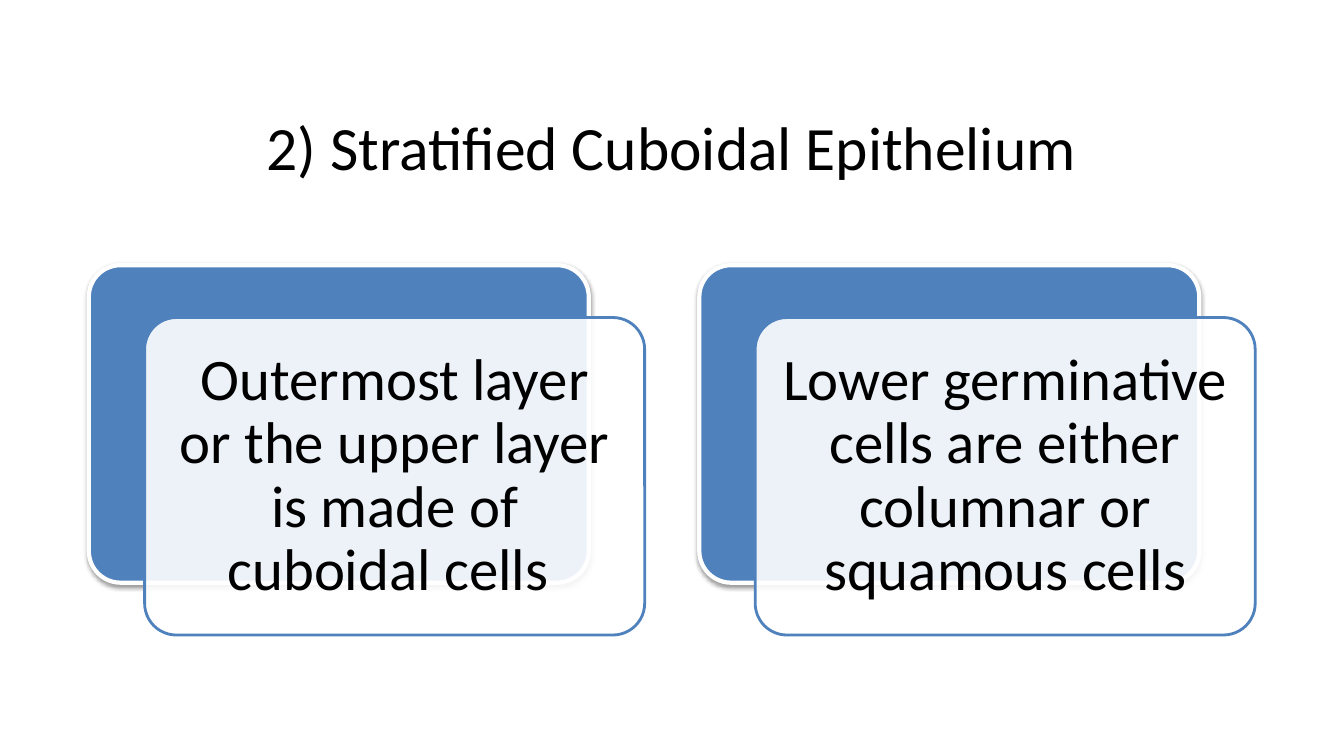
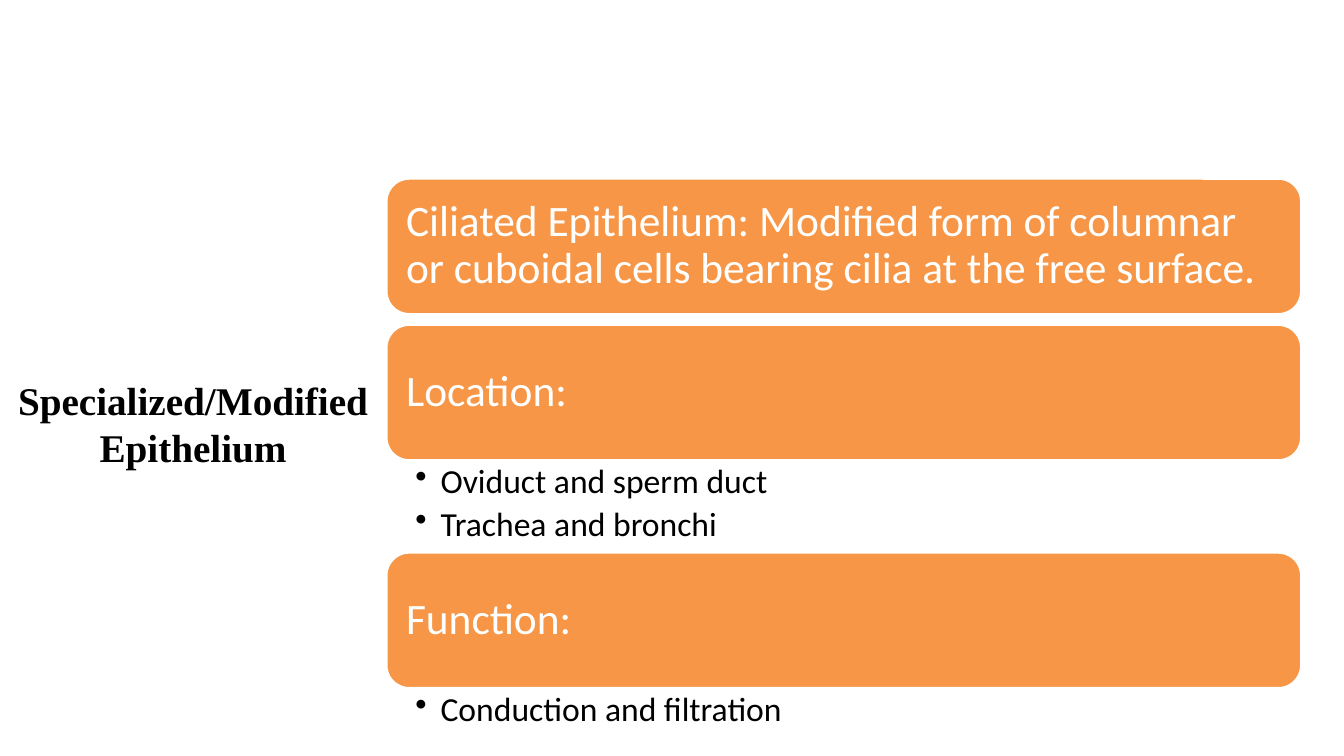
"""Build two slides on stratified cuboidal and specialized epithelium."""
from lxml.etree import SubElement
from pptx import Presentation
from pptx.dml.color import RGBColor
from pptx.enum.shapes import MSO_SHAPE
from pptx.enum.text import MSO_ANCHOR, MSO_AUTO_SIZE, PP_ALIGN
from pptx.oxml.ns import qn
from pptx.util import Pt

BLACK, WHITE, BLUE, ORANGE = "000000", "FFFFFF", "4F81BD", "F79646"
BODY_FONT = "Calibri"


def write(frame, paragraphs, size, color, font=BODY_FONT, bold=False, align=PP_ALIGN.LEFT,
          inset=(7.2, 3.6, 7.2, 3.6), anchor=MSO_ANCHOR.MIDDLE, spacing=0.9, bullets=False):
    frame.word_wrap = True
    frame.auto_size = MSO_AUTO_SIZE.NONE
    frame.vertical_anchor = anchor
    frame.margin_left, frame.margin_top, frame.margin_right, frame.margin_bottom = map(Pt, inset)
    for index, text in enumerate(paragraphs):
        paragraph = frame.add_paragraph() if index else frame.paragraphs[0]
        if bullets:
            paragraph.level = 1
            properties = paragraph._p.get_or_add_pPr()
            properties.set("marL", str(Pt(18)))
            properties.set("indent", str(-Pt(18)))
            SubElement(properties, qn("a:buChar"), char="•")
            paragraph.space_after = Pt(4.8)
        paragraph.alignment = align
        paragraph.line_spacing = spacing
        run = paragraph.add_run()
        run.text = text
        run.font.name = font
        run.font.size = Pt(size)
        run.font.bold = bold
        run.font.color.rgb = RGBColor.from_string(color)


def add_card(slide, left, top, width, height, fill, line, line_width, corner):
    shape = slide.shapes.add_shape(
        MSO_SHAPE.ROUNDED_RECTANGLE, Pt(left), Pt(top), Pt(width), Pt(height))
    shape.adjustments[0] = corner
    shape.shadow.inherit = False
    shape.fill.solid()
    shape.fill.fore_color.rgb = RGBColor.from_string(fill)
    shape.line.color.rgb = RGBColor.from_string(line)
    shape.line.width = Pt(line_width)
    return shape


presentation = Presentation()
presentation.slide_width, presentation.slide_height = Pt(960), Pt(540)

titles = [
    ("2) Stratified Cuboidal Epithelium", (138.2, 62.6, 683.3, 82.8), 44, BODY_FONT, False),
    ("Specialized/Modified Epithelium", (0, 185, 275.8, 234.7), 28, "Times New Roman", True),
]
slides = []
for text, box, size, font, bold in titles:
    slide = presentation.slides.add_slide(presentation.slide_layouts[5])
    title = slide.shapes.title
    title.left, title.top, title.width, title.height = map(Pt, box)
    write(title.text_frame, [text], size, BLACK, font, bold, PP_ALIGN.CENTER, spacing=1.0)
    slides.append(slide)
cuboidal_slide, specialized_slide = slides

layers = [
    "Outermost layer or the upper layer is made of cuboidal cells ",
    "Lower germinative cells are either columnar or squamous cells",
]
card_width, card_height = 357.2, 226.8
for index, text in enumerate(layers):
    left, top = 63.4 + 436.1 * index, 189.4
    back = add_card(cuboidal_slide, left, top, card_width, card_height, BLUE, WHITE, 3, 0.1)
    effects = back._element.spPr.find(qn("a:effectLst"))
    shadow = SubElement(effects, qn("a:outerShdw"), blurRad=str(Pt(3.1)), dist=str(Pt(1.6)),
                        dir="5400000", rotWithShape="0")
    shadow_color = SubElement(shadow, qn("a:srgbClr"), val=BLACK)
    SubElement(shadow_color, qn("a:alpha"), val="38000")

    front = add_card(cuboidal_slide, left + 39.9, top + 37.4, card_width, card_height,
                     WHITE, BLUE, 2, 0.1)
    fill_color = front._element.spPr.find(qn("a:solidFill")).find(qn("a:srgbClr"))
    SubElement(fill_color, qn("a:alpha"), val="90000")
    write(front.text_frame, [text], 42, BLACK, align=PP_ALIGN.CENTER, inset=(12.2,) * 4)

sections = [
    ("Ciliated Epithelium: Modified form of columnar or cuboidal cells bearing cilia "
     "at the free surface.", [], 7.2),
    ("Location: ", ["Oviduct and sperm duct", "Trachea and bronchi"], 65.5),
    ("Function:", ["Conduction and filtration"], 40.3),
]
left, top, width, bar_height = 275.8, 127.4, 653.8, 97.2
for heading, details, space_below in sections:
    bar = add_card(specialized_slide, left, top, width, bar_height, ORANGE, WHITE, 2, 0.17)
    write(bar.text_frame, [heading], 31, WHITE, inset=(9.4,) * 4)
    top += bar_height
    if details:
        box = specialized_slide.shapes.add_textbox(Pt(left), Pt(top), Pt(width), Pt(space_below))
        write(box.text_frame, details, 24, BLACK, inset=(20.9, 2.9, 17.3, 2.9),
              anchor=MSO_ANCHOR.TOP, bullets=True)
    top += space_below

presentation.save("out.pptx")
